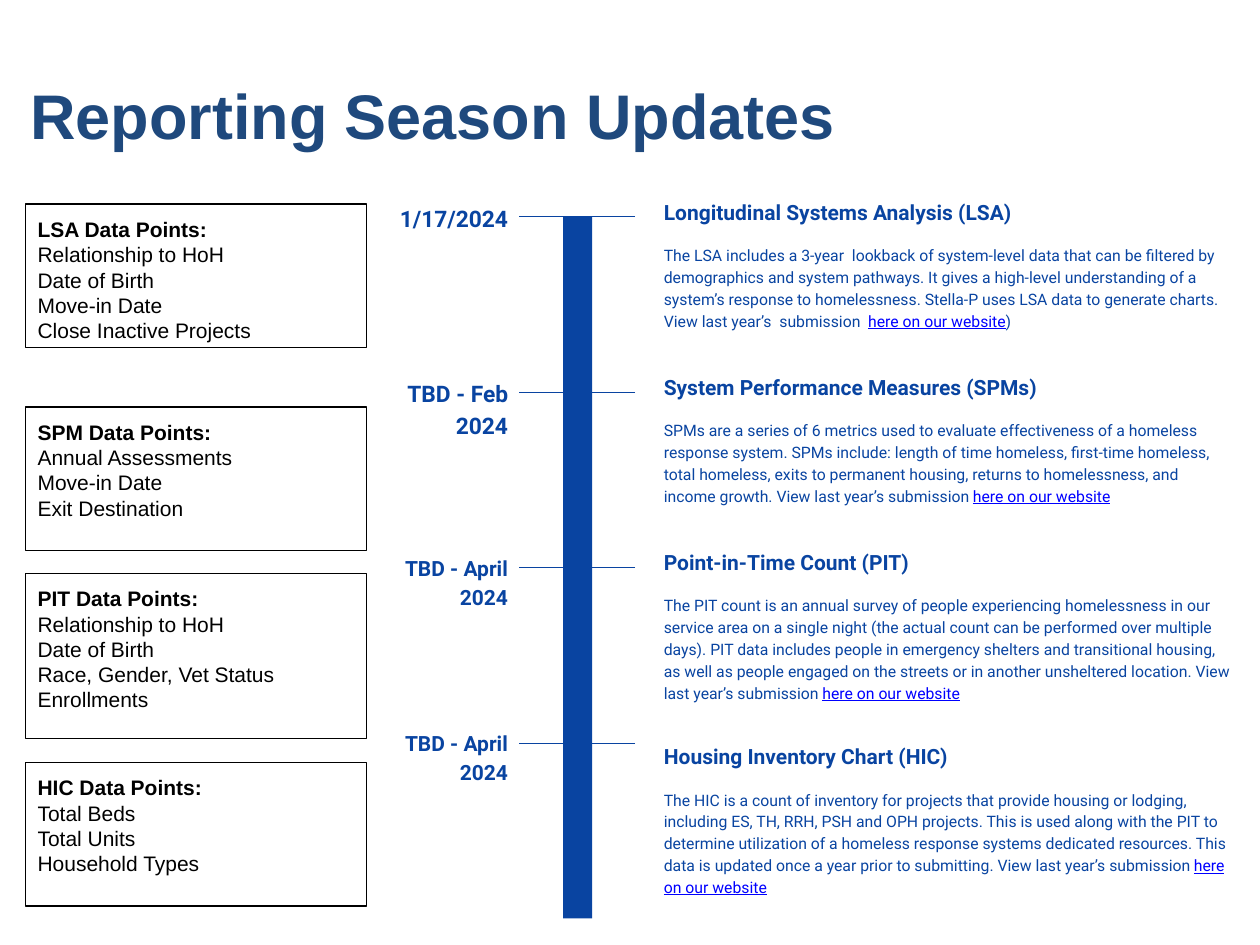
from lxml import etree
from pptx import Presentation
from pptx.dml.color import RGBColor
from pptx.enum.shapes import MSO_CONNECTOR, MSO_SHAPE
from pptx.enum.text import MSO_ANCHOR, PP_ALIGN
from pptx.oxml.ns import qn
from pptx.util import Inches, Pt

RECT = MSO_SHAPE.RECTANGLE
STRAIGHT = MSO_CONNECTOR.STRAIGHT
TOP, MIDDLE = MSO_ANCHOR.TOP, MSO_ANCHOR.MIDDLE
LEFT, RIGHT = PP_ALIGN.LEFT, PP_ALIGN.RIGHT
COLORS = {"title": "1F497D", "blue": "0944A1", "link": "0000FF", "black": "000000"}

prs = Presentation()
prs.slide_width, prs.slide_height = Inches(10), Inches(7.5)
s = prs.slides.add_slide(prs.slide_layouts[6])


def set_frame(sp, anchor=TOP):
    tf = sp.text_frame
    tf.word_wrap = True
    tf.vertical_anchor = anchor
    tf.margin_left = tf.margin_right = Inches(0.1)
    tf.margin_top = tf.margin_bottom = Inches(0.1)
    return tf


def add_text(x, y, w, h, text, size, bold=True, align=LEFT):
    p = set_frame(s.shapes.add_textbox(Inches(x), Inches(y), Inches(w), Inches(h))).paragraphs[0]
    p.alignment = align
    p.line_spacing = 1.15
    p.font.name, p.font.size, p.font.bold = "Roboto", Pt(size), bold
    r = p.add_run()
    r.text = text
    r.font.color.rgb = RGBColor.from_string(COLORS["blue"])
    return p


sp = s.shapes.add_textbox(Inches(0), Inches(0.37), Inches(9.32), Inches(1.08))
tf = set_frame(sp, MIDDLE)
tf.margin_left = Inches(0.24)
p = tf.paragraphs[0]
p.text = "Reporting Season Updates"
p.font.name, p.font.size, p.font.bold = "Arial", Pt(36), True
p.font.color.rgb = RGBColor.from_string(COLORS["title"])

reports = [
    ("1/17/2024", 13, 1.45, "Longitudinal Systems Analysis (LSA)",
     "The LSA includes a 3-year  lookback of system-level data that can be filtered by "
     "demographics and system pathways. It gives a high-level understanding of a system’s "
     "response to homelessness. Stella-P uses LSA data to generate charts. "
     "View last year’s  submission  ", ")"),
    ("TBD - Feb 2024", 13, 2.84, "System Performance Measures (SPMs)",
     "SPMs are a series of 6 metrics used to evaluate effectiveness of a homeless response "
     "system. SPMs include: length of time homeless, first-time homeless, total homeless, "
     "exits to permanent housing, returns to homelessness, and income growth. "
     "View last year’s submission ", ""),
    ("TBD - April 2024", 12, 4.23, "Point-in-Time Count (PIT)",
     "The PIT count is an annual survey of people experiencing homelessness in our service "
     "area on a single night (the actual count can be performed over multiple days). PIT data "
     "includes people in emergency shelters and transitional housing, as well as people engaged "
     "on the streets or in another unsheltered location. View last year’s submission ", ""),
    ("TBD - April 2024", 12, 5.77, "Housing Inventory Chart (HIC)",
     "The HIC is a count of inventory for projects that provide housing or lodging, including "
     "ES, TH, RRH, PSH and OPH projects. This is used along with the PIT to determine "
     "utilization of a homeless response systems dedicated resources. This data is updated once "
     "a year prior to submitting. View last year’s submission ", ""),
]
for i, (date, date_size, head_y, heading, body, ending) in enumerate(reports):
    y = 1.72 + 1.393 * i
    sp = s.shapes.add_shape(RECT, Inches(4.47), Inches(y), Inches(0.23), Inches(1.39))
    sp.shadow.inherit = False
    sp.fill.solid()
    sp.fill.fore_color.rgb = RGBColor.from_string(COLORS["blue"])
    sp.line.fill.background()

    line = s.shapes.add_connector(STRAIGHT, Inches(5.04), Inches(y), Inches(4.12), Inches(y))
    line.line.color.rgb = RGBColor.from_string(COLORS["blue"])
    line.line.width = Pt(0.75)
    etree.SubElement(line._element.spPr, qn("a:effectLst"))

    add_text(2.83, y - 0.23, 1.3, 0.48, date, date_size, align=RIGHT)
    add_text(5.17, head_y, 4.69, 0.38, heading, 12)
    p = add_text(5.17, head_y + 0.38, 4.69, 1, body, 9, bold=False)
    p.space_after = Pt(16)
    r = p.add_run()
    r.text = "here on our website"
    r.font.underline = True
    r.font.color.rgb = RGBColor.from_string(COLORS["link"])
    if ending:
        r = p.add_run()
        r.text = ending
        r.font.color.rgb = RGBColor.from_string(COLORS["blue"])

data_points = [
    (1.62, 1.14, ["LSA Data Points:", "Relationship to HoH", "Date of Birth", "Move-in Date",
                  "Close Inactive Projects"]),
    (3.23, 1.14, ["SPM Data Points:", "Annual Assessments", "Move-in Date", "Exit Destination"]),
    (4.55, 1.31, ["PIT Data Points:", "Relationship to HoH", "Date of Birth",
                  "Race, Gender, Vet Status", "Enrollments"]),
    (6.05, 1.14, ["HIC Data Points:", "Total Beds", "Total Units", "Household Types"]),
]
for y, h, lines in data_points:
    sp = s.shapes.add_shape(RECT, Inches(0.2), Inches(y), Inches(2.71), Inches(h))
    sp.shadow.inherit = False
    sp.fill.background()
    sp.line.color.rgb = RGBColor.from_string(COLORS["black"])
    sp.line.width = Pt(0.75)
    tf = set_frame(sp)
    for i, text in enumerate(lines):
        p = tf.add_paragraph() if i else tf.paragraphs[0]
        p.text = text
        p.alignment = LEFT
        p.font.name, p.font.size, p.font.bold = "Arial", Pt(12), i == 0
        p.font.color.rgb = RGBColor.from_string(COLORS["black"])

prs.save("out.pptx")
